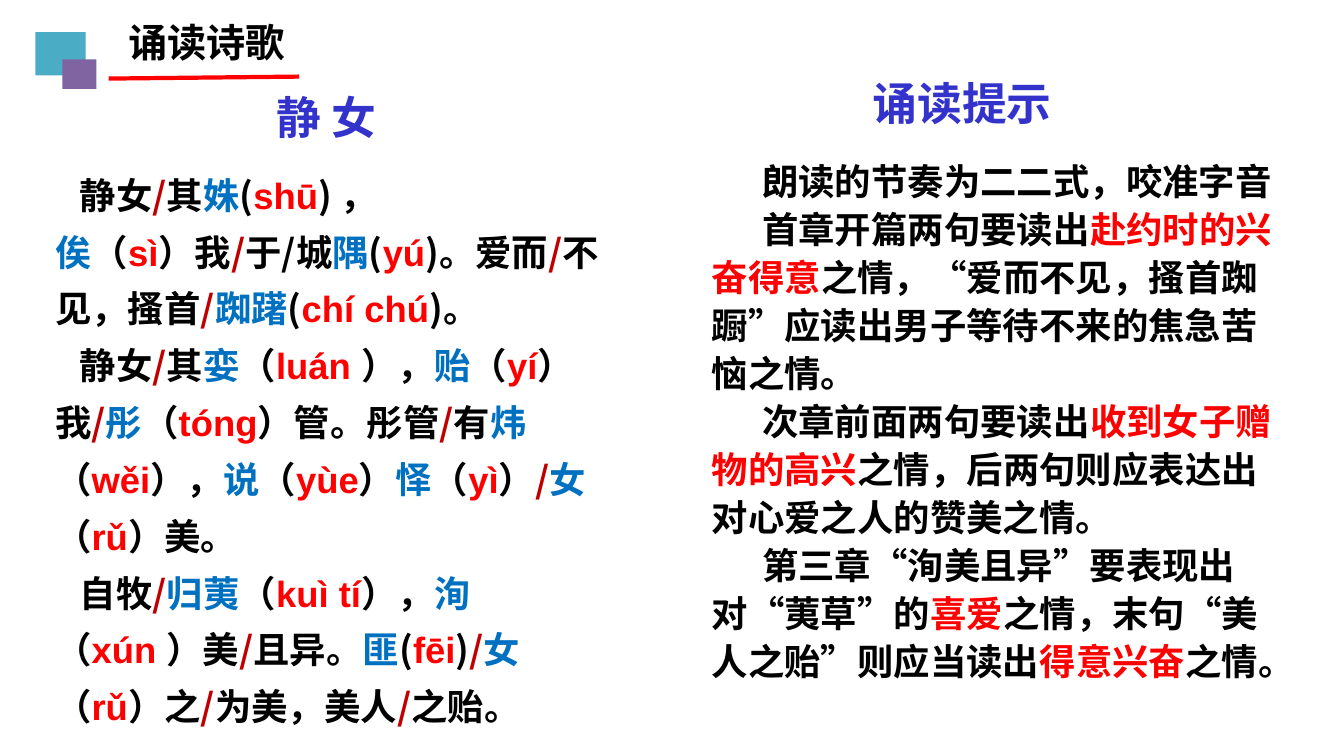
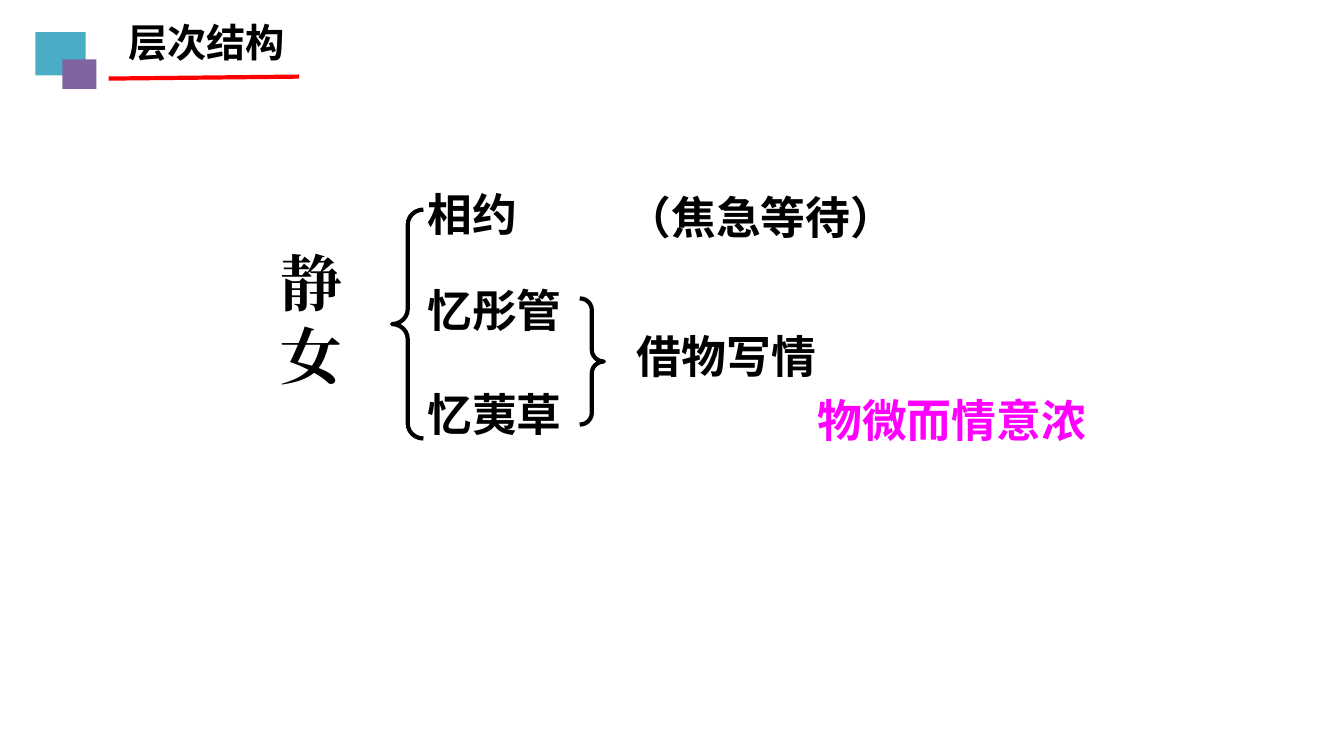
"""Build two slides on the poem 静女: reading aloud and structure."""
from dataclasses import dataclass

from lxml.etree import SubElement
from pptx import Presentation
from pptx.dml.color import RGBColor
from pptx.enum.shapes import MSO_CONNECTOR, MSO_SHAPE
from pptx.enum.text import MSO_ANCHOR, MSO_AUTO_SIZE, PP_ALIGN
from pptx.oxml.ns import qn
from pptx.util import Cm, Pt

HUES = {
    "black": "000000", "red": "FF0000", "wine": "C00000", "blue": "0070C0",
    "indigo": "3333CC", "pink": "FF00FF", "teal": "4BACC6", "purple": "8064A2",
}
MARKS = {"#": "blue", "@": "red", "+": "red", "!": "wine"}
SANS = "Noto Sans CJK SC"


@dataclass(frozen=True)
class Box:
    left: float
    top: float
    width: float
    height: float

    def cm(self) -> tuple:
        return Cm(self.left), Cm(self.top), Cm(self.width), Cm(self.height)


@dataclass(frozen=True)
class Style:
    size: int = 32
    hue: str = "black"
    font: str = SANS
    pitch: float = 1.2
    indent: float = 0
    align: PP_ALIGN = PP_ALIGN.LEFT


@dataclass(frozen=True)
class Label:
    text: str
    box: Box
    style: Style = Style()


@dataclass(frozen=True)
class Brace:
    box: Box
    turn: int


HEAD = Style(28, align=PP_ALIGN.CENTER)
CROWN = Style(hue="indigo")
VERSE = Style(26, pitch=1.56, indent=0.62)
HINT = Style(26, font="Noto Sans CJK JP", pitch=1.32, indent=1.27)
HEAD_BOX = Box(2.54, 0.33, 5.33, 1.45)
SQUARES = {"teal": Box(0.89, 0.81, 1.27, 1.09), "purple": Box(1.57, 1.5, 0.86, 0.74)}

POEM = (
    "静女|!/|其|#姝|(|@shū|) ，|#俟|（|@sì|）我|!/|于/城|#隅|(|@yú|)。爱而|!/|不见，搔首|!/|#踟躇|(|@chí chú|)。",
    "静女|!/|其|#娈|（|@luán |），|#贻|（|@yí|）我|!/|#彤|（|@tóng|）管。彤管|!/|有|#炜|（|@wěi|），|#说"
    "|（|@yùe|）|#怿|（|@yì|）|!/|#女|（|@rǔ|）美。",
    "自牧|!/|#归荑|（|@kuì tí|），|#洵|（|@xún |）美|!/|且异。|#匪|(|@fēi|)|!/|#女|（|@rǔ|）之|!/|为美，美人|!/|之贻。",
)
HINTS = (
    "朗读的节奏为二二式，咬准字音",
    "首章开篇两句要读出|+赴约时的兴奋得意|之情，“爱而不见，搔首踟蹰”应读出男子等待不来的焦急苦恼之情。",
    "次章前面两句要读出|+收到女子赠物的高兴|之情，后两句则应表达出对心爱之人的赞美之情。",
    "第三章“洵美且异”要表现出对“荑草”的|+喜爱|之情，末句“美人之贻”则应当读出|+得意兴奋|之情。",
)
CROWNS = (
    Label("静 女", Box(6.73, 2.13, 3.6, 1.63), CROWN),
    Label("诵读提示", Box(21.74, 1.78, 5.72, 1.63), CROWN),
)
NODES = (
    Label("静女", Box(6.83, 6.05, 2.34, 4.01), Style(44, font="Times New Roman", pitch=1.19)),
    Label("相约", Box(10.52, 4.57, 4.37, 1.63)),
    Label("忆彤管", Box(10.52, 6.99, 3.94, 1.63)),
    Label("忆荑草", Box(10.52, 9.63, 4.72, 1.63)),
    Label("（焦急等待）", Box(15.54, 4.65, 8.94, 1.63)),
    Label("借物写情", Box(15.8, 8.15, 5.99, 1.63)),
    Label("物微而情意浓", Box(20.35, 9.78, 8.61, 1.63), Style(hue="pink")),
)
BRACES = (Brace(Box(9.88, 5.28, 0.79, 5.77), 180), Brace(Box(14.61, 7.52, 0.61, 3.18), 0))


def tint(hue: str) -> RGBColor:
    return RGBColor.from_string(HUES[hue])


def write(shape, lines: tuple, box: Box, style: Style) -> None:
    shape.left, shape.top, shape.width, shape.height = box.cm()
    frame = shape.text_frame
    frame.word_wrap = True
    frame.auto_size = MSO_AUTO_SIZE.NONE
    frame.vertical_anchor = MSO_ANCHOR.TOP
    for rank, line in enumerate(lines):
        para = frame.add_paragraph() if rank else frame.paragraphs[0]
        props = para._p.get_or_add_pPr()
        props.set("marL", "0")
        props.set("indent", str(Cm(style.indent)))
        SubElement(props, qn("a:buNone"))
        para.alignment = style.align
        para.space_before = Pt(0)
        para.line_spacing = Pt(round(style.size * style.pitch, 1))
        font = para.font
        font.size, font.bold, font.name = Pt(style.size), True, style.font
        font.color.rgb = tint(style.hue)
        SubElement(props.find(qn("a:defRPr")), qn("a:ea")).set("typeface", style.font)
        for part in line.split("|"):
            run = para.add_run()
            mark = part[0]
            run.text = part[1:] if mark in MARKS else part
            if mark in MARKS:
                run.font.color.rgb = tint(MARKS[mark])
            if mark == "@":
                run.font.name = "Arial"


def add_text(slide, label: Label, *more: str) -> None:
    shape = slide.shapes.add_textbox(*label.box.cm())
    write(shape, (label.text, *more), label.box, label.style)


def add_brace(slide, brace: Brace) -> None:
    shape = slide.shapes.add_shape(MSO_SHAPE.RIGHT_BRACE, *brace.box.cm())
    shape.adjustments[0] = 0.48
    shape.rotation = brace.turn
    shape.shadow.inherit = False
    shape.fill.background()
    shape.line.color.rgb = tint("black")
    shape.line.width = Pt(3)


def add_slide(deck, layout: int, title: str):
    slide = deck.slides.add_slide(deck.slide_layouts[layout])
    write(slide.shapes.title, (title,), HEAD_BOX, HEAD)
    rule = slide.shapes.add_connector(
        MSO_CONNECTOR.STRAIGHT, Cm(2.74), Cm(1.98), Cm(7.54), Cm(1.93))
    rule.line.color.rgb = tint("red")
    rule.line.width = Pt(3)
    SubElement(rule._element.spPr, qn("a:effectLst"))
    group = slide.shapes.add_group_shape()
    for hue, box in SQUARES.items():
        square = group.shapes.add_shape(MSO_SHAPE.RECTANGLE, *box.cm())
        square.shadow.inherit = False
        square.fill.solid()
        square.fill.fore_color.rgb = tint(hue)
        square.line.fill.background()
    return slide


def main() -> None:
    deck = Presentation()
    deck.slide_width, deck.slide_height = Cm(33.87), Cm(19.05)

    slide = add_slide(deck, 1, "诵读诗歌")
    write(slide.placeholders[1], HINTS, Box(17.68, 3.76, 15.01, 13.69), HINT)
    add_text(slide, Label(POEM[0], Box(1.14, 3.9, 14.53, 14.86), VERSE), *POEM[1:])
    for label in CROWNS:
        add_text(slide, label)

    slide = add_slide(deck, 5, "层次结构")
    for label in NODES:
        add_text(slide, label)
    for brace in BRACES:
        add_brace(slide, brace)

    deck.save("out.pptx")


if __name__ == "__main__":
    main()
